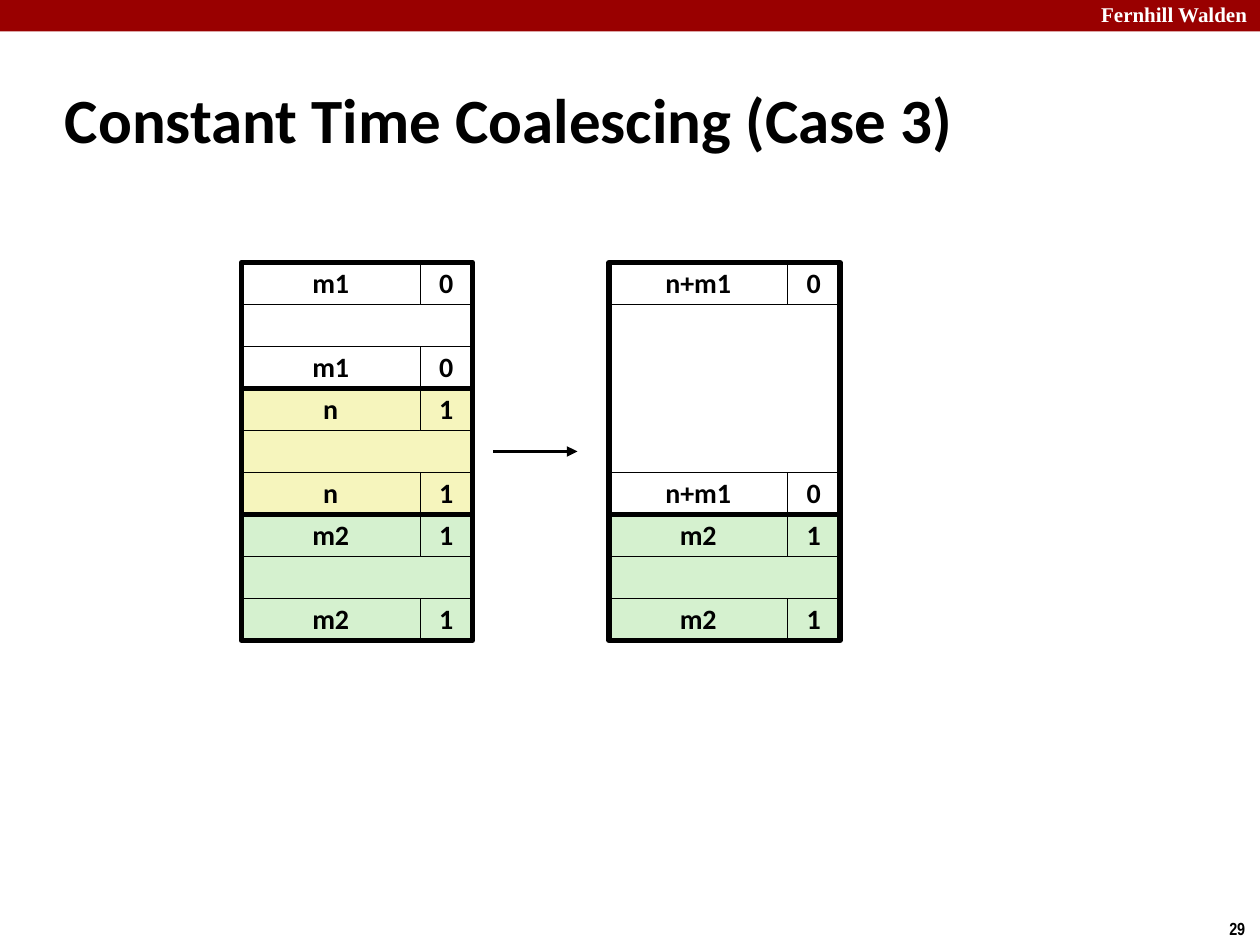
"""Build the slide on constant time coalescing, case 3."""
import pptx
import pptx.dml.color
import pptx.enum.shapes
import pptx.enum.text
import pptx.oxml
import pptx.oxml.ns
import pptx.util

WHITE, BLACK, RED, YELLOW, GREEN = "FFFFFF", "000000", "990000", "F6F5BD", "D5F1CF"
SLIDE_WIDTH, SLIDE_HEIGHT = 120, 90
HEAP_TOP, ROW, SIZE_WIDTH, FLAG_WIDTH = 25, 4, 17, 5
BLOCK_WIDTH = SIZE_WIDTH + FLAG_WIDTH

# Each heap: left edge, then blocks of (size, allocated flag, fill, rows)
HEAPS = [
    (23, [("m1", "0", WHITE, 3), ("n", "1", YELLOW, 3), ("m2", "1", GREEN, 3)]),
    (58, [("n+m1", "0", WHITE, 6), ("m2", "1", GREEN, 3)]),
]
ARROW = (47, 43, 55, 43)
LABELS = [
    ("Fernhill Walden", (103.7, -0.4, 17.1, 3.6),
     {"size": 12, "name": "Times New Roman", "color": WHITE}, {}),
    ("29", (115.9, 86.8, 4.1, 3.2),
     {"size": 10, "name": "Arial Narrow", "color": BLACK}, {"word_wrap": False}),
    ("Constant Time Coalescing (Case 3)", (5, 7.5, 110, 7.5),
     {"size": 36, "name": "Calibri", "color": BLACK},
     {"vertical_anchor": pptx.enum.text.MSO_ANCHOR.MIDDLE}),
]
CELL_FONT = {"size": 16, "name": "Calibri", "color": BLACK}
CELL_FRAME = {"word_wrap": False, "vertical_anchor": pptx.enum.text.MSO_ANCHOR.MIDDLE}
CELL_PARAGRAPH = {"alignment": pptx.enum.text.PP_ALIGN.CENTER, "line_spacing": 0.98}


def units(*values):
    """Turn twelfths of an inch into lengths."""
    return [pptx.util.Inches(value / 12) for value in values]


def rgb(code):
    """Turn a hex string into a colour."""
    return pptx.dml.color.RGBColor.from_string(code)


def assign(target, values):
    """Set each attribute named in a dict."""
    for name, value in values.items():
        setattr(target, name, value)


def write(frame, text, font, frame_format, paragraph_format):
    """Put one bold run of text in a frame."""
    assign(frame, {"word_wrap": True, "margin_left": pptx.util.Inches(0.1),
                   "margin_right": pptx.util.Inches(0.1), **frame_format})
    paragraph = frame.paragraphs[0]
    assign(paragraph, paragraph_format)
    run = paragraph.add_run()
    run.text = text
    assign(run.font, {"size": pptx.util.Pt(font["size"]), "name": font["name"], "bold": True})
    run.font.color.rgb = rgb(font["color"])


def add_box(slide, place, fill=None, line_width=None, text=None):
    """Add a rectangle with optional fill, outline and text."""
    box = slide.shapes.add_shape(pptx.enum.shapes.MSO_SHAPE.RECTANGLE, *units(*place))
    box.shadow.inherit = False
    if fill:
        box.fill.solid()
        box.fill.fore_color.rgb = rgb(fill)
    else:
        box.fill.background()
    if line_width:
        box.line.color.rgb = rgb(BLACK)
        box.line.width = pptx.util.Pt(line_width)
    else:
        box.line.fill.background()
    if text:
        write(box.text_frame, text, CELL_FONT, CELL_FRAME, CELL_PARAGRAPH)


def add_block(slide, left, top, size, flag, fill, rows):
    """Add a memory block: header, payload, footer and heavy outline."""
    footer_top = top + (rows - 1) * ROW
    add_box(slide, (left, top + ROW, BLOCK_WIDTH, (rows - 2) * ROW), fill, 0.25)
    for tag_top in (top, footer_top):
        add_box(slide, (left, tag_top, SIZE_WIDTH, ROW), fill, 0.25, size)
        add_box(slide, (left + SIZE_WIDTH, tag_top, FLAG_WIDTH, ROW), fill, 0.25, flag)
    add_box(slide, (left, top, BLOCK_WIDTH, rows * ROW), line_width=3)


def add_arrow(slide, ends):
    """Add a straight arrow between two points."""
    arrow = slide.shapes.add_connector(pptx.enum.shapes.MSO_CONNECTOR.STRAIGHT, *units(*ends))
    arrow.line.color.rgb = rgb(BLACK)
    arrow.line.width = pptx.util.Pt(2)
    head = pptx.oxml.parse_xml(f'<a:tailEnd {pptx.oxml.ns.nsdecls("a")} type="triangle"/>')
    arrow.line._get_or_add_ln().append(head)
    no_effects = pptx.oxml.parse_xml(f'<a:effectLst {pptx.oxml.ns.nsdecls("a")}/>')
    arrow._element.spPr.append(no_effects)


def main():
    """Build and save the slide."""
    deck = pptx.Presentation()
    deck.slide_width, deck.slide_height = units(SLIDE_WIDTH, SLIDE_HEIGHT)
    slide = deck.slides.add_slide(deck.slide_layouts[6])
    add_box(slide, (0, 0, SLIDE_WIDTH, 3), RED)
    for text, place, font, frame_format in LABELS:
        label = slide.shapes.add_textbox(*units(*place))
        write(label.text_frame, text, font, frame_format, {})
    for left, blocks in HEAPS:
        top = HEAP_TOP
        for size, flag, fill, rows in blocks:
            add_block(slide, left, top, size, flag, fill, rows)
            top += rows * ROW
    add_arrow(slide, ARROW)
    deck.save("out.pptx")


if __name__ == "__main__":
    main()
